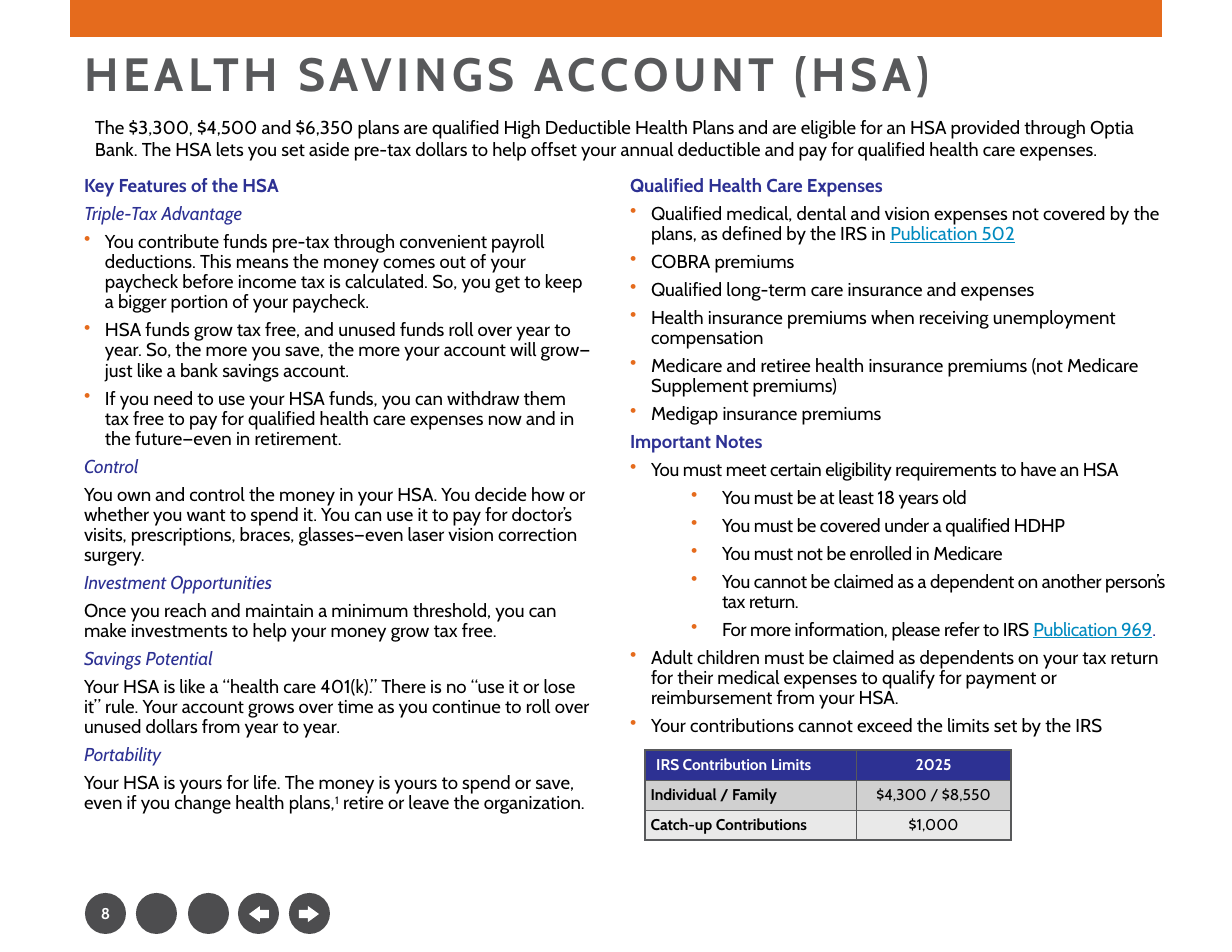
from lxml import etree
from pptx import Presentation
from pptx import util as u
from pptx.dml.color import RGBColor
from pptx.enum import shapes, text
from pptx.oxml.ns import qn

EMU_PER_PX = 914400 / 112
ORANGE = RGBColor(0xE5, 0x6B, 0x1D)
NAVY = RGBColor(0x2D, 0x31, 0x93)
LINK = RGBColor(0x00, 0x8A, 0xBF)
GRAY = RGBColor(0x58, 0x59, 0x5B)
DARK = RGBColor(0x4D, 0x4D, 0x4F)
SILVER = RGBColor(0xD0, 0xD0, 0xD0)
PALE = RGBColor(0xE9, 0xE9, 0xE9)
WHITE = RGBColor(0xFF, 0xFF, 0xFF)
BLACK = RGBColor(0x00, 0x00, 0x00)


def px(n):
    return u.Emu(round(n * EMU_PER_PX))


def add_run(p, words, size=12, color=BLACK, attrs=None, **fmt):
    r = p.add_run()
    r.text = words
    r.font.color.rgb = color
    for name, value in {"name": "Cabin", "size": u.Pt(size), **fmt}.items():
        setattr(r.font, name, value)
    for name, value in (attrs or {}).items():
        r.font._element.set(name, value)


prs = Presentation()
prs.slide_width, prs.slide_height = px(1232), px(952)
s = prs.slides.add_slide(prs.slide_layouts[5])

# Top band and round navigation buttons
parts = [(s.shapes.add_shape(shapes.MSO_SHAPE.RECTANGLE, px(70), 0, px(1092), px(37)), ORANGE)]
buttons = [s.shapes.add_shape(shapes.MSO_SHAPE.OVAL, px(x), px(893), px(41), px(41))
           for x in (85, 136, 188, 238, 289)]
parts += [(sp, DARK) for sp in buttons]

# Arrows on the last two buttons
ARROW = [(-10, 0), (1, -8), (1, -4), (10, -4), (10, 4), (1, 4), (1, 8)]
for center, side in ((259, 1), (309, -1)):
    points = [(center + side * x, 914 + y) for x, y in ARROW]
    fb = s.shapes.build_freeform(*points[0], scale=EMU_PER_PX)
    fb.add_line_segments(points[1:], close=True)
    parts.append((fb.convert_to_shape(), WHITE))

for sp, color in parts:
    sp.shadow.inherit = False
    sp.fill.solid()
    sp.fill.fore_color.rgb = color
    sp.line.fill.background()

# Page number
tf = buttons[0].text_frame
tf.margin_left = tf.margin_right = 0
tf.vertical_anchor = text.MSO_ANCHOR.MIDDLE
p = tf.paragraphs[0]
p.alignment = text.PP_ALIGN.CENTER
add_run(p, "8", 10, WHITE, bold=True)

# Title
title = s.shapes.title
title.left, title.top, title.width, title.height = px(73), px(39), px(1063), px(74)
tf = title.text_frame
tf.vertical_anchor = text.MSO_ANCHOR.MIDDLE
p = tf.paragraphs[0]
p.alignment = text.PP_ALIGN.LEFT
p.line_spacing = 0.9
add_run(p, "HEALTH SAVINGS ACCOUNT (HSA)", 30, GRAY, {"spc": "300"}, bold=True)

# Introduction
tf = s.shapes.add_textbox(px(84), px(110), px(1108), px(56)).text_frame
tf.word_wrap = True
add_run(tf.paragraphs[0], "The $3,300, $4,500 and $6,350 plans are qualified High Deductible Health Plans and are "
        "eligible for an HSA provided through Optia Bank. The HSA lets you set aside pre-tax dollars to help offset "
        "your annual deductible and pay for qualified health care expenses.")

# Two text columns: paragraph style, then plain runs or (text, format) runs
STYLES = {
    "head": {"color": NAVY, "bold": True},
    "sub": {"color": NAVY, "italic": True},
    "body": {},
    "bullet": {},
    "tight": {"attrs": {"spc": "-20"}},
    "nested": {"attrs": {"spc": "-20"}},
}
INDENTS = {"bullet": (21, 21), "tight": (21, 21), "nested": (92, 31)}
UNDERLINED = {"color": LINK, "underline": True}

FEATURES = [
    ("head", "Key Features of the HSA"),
    ("sub", "Triple-Tax Advantage"),
    ("bullet", "You contribute funds pre-tax through convenient payroll deductions. This means the money comes out "
               "of your paycheck before income tax is calculated. So, you get to keep a bigger portion of your "
               "paycheck."),
    ("bullet", "HSA funds grow tax free, and unused funds roll over year to year. So, the more you save, the more "
               "your account will grow—just like a bank savings account."),
    ("bullet", "If you need to use your HSA funds, you can withdraw them tax free to pay for qualified health care "
               "expenses now and in the future—even in retirement."),
    ("sub", "Control"),
    ("body", "You own and control the money in your HSA. You decide how or whether you want to spend it. You can "
             "use it to pay for doctor’s visits, prescriptions, braces, glasses—even laser vision correction "
             "surgery."),
    ("sub", "Investment Opportunities"),
    ("body", "Once you reach and maintain a minimum threshold, you can make investments to help your money grow "
             "tax free."),
    ("sub", "Savings Potential"),
    ("body", "Your HSA is like a “health care 401(k).” There is no “use it or lose it” rule. Your account grows "
             "over time as you continue to roll over unused dollars from year to year."),
    ("sub", "Portability"),
    ("body", "Your HSA is yours for life. The money is yours to spend or save, even if you change health plans,",
             ("1", {"attrs": {"baseline": "30000"}}), " retire or leave the organization."),
]
EXPENSES = [
    ("head", "Qualified Health Care Expenses"),
    ("bullet", "Qualified medical, dental and vision expenses not covered by the plans, as defined by the IRS in ",
               ("Publication 502", UNDERLINED)),
    ("bullet", "COBRA premiums"),
    ("bullet", "Qualified long-term care insurance and expenses"),
    ("bullet", "Health insurance premiums when receiving unemployment compensation"),
    ("bullet", "Medicare and retiree health insurance premiums (not Medicare Supplement premiums)"),
    ("bullet", "Medigap insurance premiums"),
    ("head", "Important Notes"),
    ("tight", "You must meet certain eligibility requirements to have an HSA"),
    ("nested", "You must be at least 18 years old"),
    ("nested", "You must be covered under a qualified HDHP"),
    ("nested", "You must not be enrolled in Medicare"),
    ("nested", "You cannot be claimed as a dependent on another person’s tax return."),
    ("nested", "For more information, please refer to IRS ", ("Publication 969", UNDERLINED),
               (".", {"color": NAVY})),
    ("bullet", "Adult children must be claimed as dependents on your tax return for their medical expenses to "
               "qualify for payment or reimbursement from your HSA."),
    ("bullet", "Your contributions cannot exceed the limits set by the IRS"),
]
for left, width, height, rows in ((73, 531, 655, FEATURES), (619, 558, 679, EXPENSES)):
    tf = s.shapes.add_textbox(px(left), px(171), px(width), px(height)).text_frame
    tf.word_wrap = True
    for i, (style, *runs) in enumerate(rows):
        p = tf.add_paragraph() if i else tf.paragraphs[0]
        if style in INDENTS:
            margin, hang = INDENTS[style]
            pPr = p._p.get_or_add_pPr()
            pPr.set("marL", str(px(margin)))
            pPr.set("indent", str(-px(hang)))
            clr = etree.SubElement(pPr, qn("a:buClr"))
            etree.SubElement(clr, qn("a:srgbClr"), val=str(ORANGE))
            etree.SubElement(pPr, qn("a:buChar"), char="•")
            p.level = 1 if style == "nested" else 0
        p.line_spacing = 0.9
        p.space_before = u.Pt(5 if i else 0)
        for run in runs:
            words, extra = (run, {}) if isinstance(run, str) else run
            add_run(p, words, **{**STYLES[style], **extra})

# Contribution limits table
LIMITS = [("IRS Contribution Limits", "2025"),
          ("Individual / Family", "$4,300 / $8,550"),
          ("Catch-up Contributions", "$1,000")]
table = s.shapes.add_table(3, 2, px(645), px(750), px(366), px(90)).table
table.columns[0].width, table.columns[1].width = px(211), px(155)
for i, (row, fill) in enumerate(zip(LIMITS, (NAVY, SILVER, PALE))):
    table.rows[i].height = px(30)
    for j, words in enumerate(row):
        cell = table.cell(i, j)
        cell.vertical_anchor = text.MSO_ANCHOR.MIDDLE
        if i and j == 0:
            cell.margin_left = cell.margin_right = u.Inches(0.05)
            cell.margin_top = cell.margin_bottom = u.Inches(0.01)
        tcPr = cell._tc.get_or_add_tcPr()
        for edge, outer in (("L", j == 0), ("R", j == 1), ("T", i == 0), ("B", i == 2)):
            ln = etree.SubElement(tcPr, qn("a:ln" + edge), w=str(u.Pt(1 if outer else 0.5)))
            solid = etree.SubElement(ln, qn("a:solidFill"))
            etree.SubElement(solid, qn("a:srgbClr"), val=str(GRAY))
        cell.fill.solid()
        cell.fill.fore_color.rgb = fill
        p = cell.text_frame.paragraphs[0]
        p.alignment = text.PP_ALIGN.CENTER if j else text.PP_ALIGN.LEFT
        add_run(p, words, 10, BLACK if i else WHITE, bold=i == 0 or j == 0)

prs.save("out.pptx")
